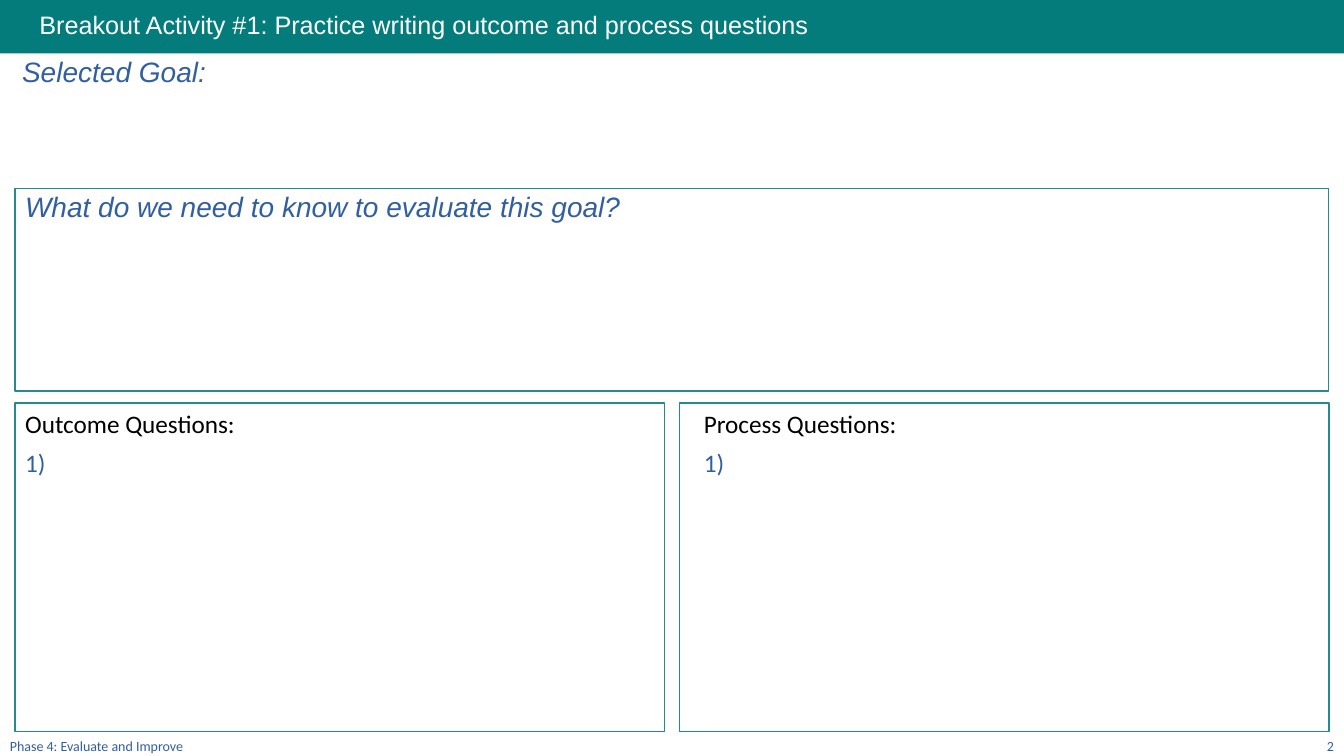
from dataclasses import dataclass

from lxml import etree
from pptx import Presentation
from pptx.dml.color import RGBColor
from pptx.enum.shapes import MSO_SHAPE as Shape
from pptx.enum.text import MSO_ANCHOR as Anchor, MSO_AUTO_SIZE as Fit, PP_ALIGN as Align
from pptx.oxml.ns import qn
from pptx.util import Inches, Pt

TEAL, EDGE, BLUE, WHITE, BLACK = "047C7C", "248A8C", "315F9F", "FFFFFF", "000000"


@dataclass
class Box:
    left: float
    top: float
    width: float
    height: float

    def place(self) -> tuple:
        return tuple(Inches(v) for v in (self.left, self.top, self.width, self.height))


@dataclass
class Label:
    text: str
    box: Box
    size: int
    font: str
    color: str
    italic: bool = False
    align: Align = Align.LEFT
    anchor: Anchor = Anchor.TOP
    line: float = 1.0


def paint(fmt, color: str) -> None:
    fmt.rgb = RGBColor.from_string(color)


def move(shape, box: Box) -> None:
    shape.left, shape.top, shape.width, shape.height = box.place()


def style(para, label: Label) -> None:
    para.alignment = label.align
    para.line_spacing = label.line
    para.space_before = Pt(0)
    for run in para.runs:
        font = run.font
        font.size, font.name, font.italic = Pt(label.size), label.font, label.italic
        paint(font.color, label.color)


def write(shape, label: Label) -> None:
    frame = shape.text_frame
    frame.word_wrap = True
    frame.auto_size = Fit.NONE
    frame.vertical_anchor = label.anchor
    frame.text = label.text
    for para in frame.paragraphs:
        style(para, label)


def add_label(label: Label) -> None:
    write(slide.shapes.add_textbox(*label.box.place()), label)


def add_rect(box: Box, fill: str = "", line: str = ""):
    rect = slide.shapes.add_shape(Shape.RECTANGLE, *box.place())
    rect.shadow.inherit = False
    if fill:
        rect.fill.solid()
        paint(rect.fill.fore_color, fill)
    else:
        rect.fill.background()
    if line:
        paint(rect.line.color, line)
        rect.line.width = Pt(1)
    else:
        rect.line.fill.background()
    return rect


def set_bullet(para, number: bool) -> None:
    props = para._p.get_or_add_pPr()
    step = Inches(0.38) if number else 0
    props.set("marL", str(step))
    props.set("indent", str(-step))
    if number:
        tint = etree.SubElement(props, qn("a:buClr"))
        etree.SubElement(tint, qn("a:srgbClr"), val=BLUE)
        etree.SubElement(props, qn("a:buFont"), typeface="Calibri")
        etree.SubElement(props, qn("a:buAutoNum"), type="arabicParenR")
    else:
        etree.SubElement(props, qn("a:buNone"))


def fill_list(holder, label: Label) -> None:
    move(holder, label.box)
    write(holder, label)
    for i, para in enumerate(holder.text_frame.paragraphs):
        para.space_after = Pt(6)
        set_bullet(para, i > 0)


deck = Presentation()
deck.slide_width, deck.slide_height = Inches(13.33), Inches(7.5)
slide = deck.slides.add_slide(deck.slide_layouts[3])

# Title band, set behind the title
band = add_rect(Box(0, 0, 13.33, 0.53), fill=TEAL)
slide.shapes._spTree.insert(2, band._element)
head = Label("Breakout Activity #1: Practice writing outcome and process questions",
             Box(0.29, 0.08, 9.66, 0.45), 18, "Arial", WHITE, line=0.9)
move(slide.shapes.title, head.box)
write(slide.shapes.title, head)

# Goal and what to know
add_label(Label("Selected Goal:", Box(0.12, 0.53, 12.92, 1.02), 20, "Arial", BLUE, True, line=0.9))
need = Label("What do we need to know to evaluate this goal?",
             Box(0.15, 1.87, 13.03, 2.01), 20, "Arial", BLUE, True, line=0.9)
write(add_rect(need.box, line=EDGE), need)

# Question lists, each in its frame
for slot, kind, edge, left in ((1, "Outcome", 0.15, 0.15), (2, "Process", 6.74, 6.88)):
    add_rect(Box(edge, 4, 6.44, 3.26), line=EDGE)
    fill_list(slide.placeholders[slot],
              Label(f"{kind} Questions:\n ", Box(left, 4, 6.27, 0.79), 18, "Calibri", BLACK))

# Footer
for text, left, width, align in (("Phase 4: Evaluate and Improve", 0, 4.5, Align.LEFT),
                                 ("2", 10.33, 3, Align.RIGHT)):
    add_label(Label(text, Box(left, 7.32, width, 0.21), 10, "Calibri", BLUE,
                    align=align, anchor=Anchor.BOTTOM))

deck.save("out.pptx")
